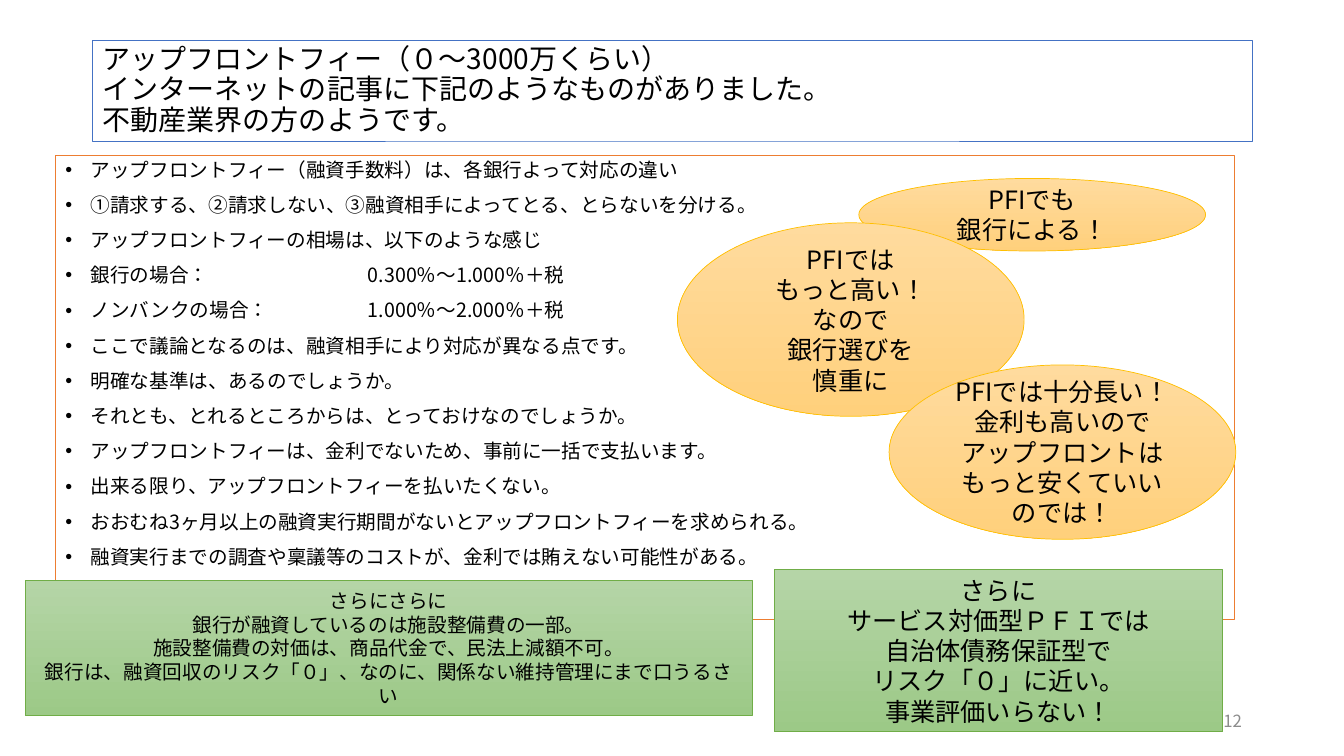
import pptx
import pptx.util
import pptx.dml.color
import pptx.enum.lang
import pptx.enum.shapes
import pptx.enum.text
import pptx.oxml.ns
import lxml.etree

SLIDE_W, SLIDE_H = 13.33, 7.5
FONT = "Noto Sans CJK JP"
TIGHT, NORMAL = 0.9, 1.0
HAIRLINE = 0.5
RECT = pptx.enum.shapes.MSO_SHAPE.RECTANGLE
OVAL = pptx.enum.shapes.MSO_SHAPE.OVAL
ALIGN = pptx.enum.text.PP_ALIGN
ANCHOR = pptx.enum.text.MSO_ANCHOR

HEADING = [
    "アップフロントフィー（０～3000万くらい）",
    "インターネットの記事に下記のようなものがありました。",
    "不動産業界の方のようです。",
]
ARTICLE = [
    "アップフロントフィー（融資手数料）は、各銀行よって対応の違い",
    "①請求する、➁請求しない、③融資相手によってとる、とらないを分ける。",
    "アップフロントフィーの相場は、以下のような感じ",
    "銀行の場合：\t\t0.300％～1.000％＋税",
    "ノンバンクの場合：\t1.000％～2.000％＋税",
    "ここで議論となるのは、融資相手により対応が異なる点です。",
    "明確な基準は、あるのでしょうか。",
    "それとも、とれるところからは、とっておけなのでしょうか。",
    "アップフロントフィーは、金利でないため、事前に一括で支払います。",
    "出来る限り、アップフロントフィーを払いたくない。",
    "おおむね3ヶ月以上の融資実行期間がないとアップフロントフィーを求められる。",
    "融資実行までの調査や稟議等のコストが、金利では賄えない可能性がある。",
]
OPINIONS = [
    ((63.9, 23.6, 25.8, 9.6), ["PFIでも", "銀行による！"]),
    ((50.4, 29.47, 25.8, 25.6),
     ["PFIでは", "もっと高い！", "なので", "銀行選びを", "慎重に"]),
    ((66.15, 48.27, 25.8, 23.07),
     ["PFIでは十分長い！", "金利も高いので", "アップフロントは", "もっと安くていいのでは！"]),
]
REMARKS = [
    ((57.6, 75.33, 33.38, 21.47), 18,
     ["さらに", "サービス対価型ＰＦＩでは", "自治体債務保証型で",
      "リスク「０」に近い。", "事業評価いらない！"]),
    ((1.88, 76.8, 54.08, 17.87), 14,
     ["さらにさらに", "銀行が融資しているのは施設整備費の一部。",
      "施設整備費の対価は、商品代金で、民法上減額不可。",
      "銀行は、融資回収のリスク「０」、なのに、関係ない維持管理にまで口うるさい"]),
]


def rgb(value):
    """Turn a hex string into a colour."""
    return pptx.dml.color.RGBColor.from_string(value)


def area(box):
    """Turn percentages of the slide into left, top, width and height."""
    sides = (SLIDE_W, SLIDE_H, SLIDE_W, SLIDE_H)
    return [pptx.util.Inches(share * side / 100) for share, side in zip(box, sides)]


def panel(slide, outline, box, fills, border):
    """Add a bordered panel with a plain fill or a downward gradient."""
    frame = slide.shapes.add_shape(outline, *area(box))
    frame.shadow.inherit = False
    if len(fills) == 1:
        frame.fill.solid()
        frame.fill.fore_color.rgb = rgb(fills[0])
    else:
        frame.fill.gradient()
        frame.fill.gradient_angle = 270
        for stop, shade in zip(frame.fill.gradient_stops, fills):
            stop.color.rgb = rgb(shade)
    frame.line.color.rgb = rgb(border)
    frame.line.width = pptx.util.Pt(HAIRLINE)
    return frame


def add_run(paragraph, words, size, color="000000"):
    """Add one Japanese run in the slide's font."""
    run = paragraph.add_run()
    run.text = words
    run.font.size = pptx.util.Pt(size)
    run.font.name = FONT
    run.font.language_id = pptx.enum.lang.MSO_LANGUAGE_ID.JAPANESE
    run.font.color.rgb = rgb(color)
    east_asian = lxml.etree.SubElement(run.font._element, pptx.oxml.ns.qn("a:ea"))
    east_asian.set("typeface", FONT)


def add_paragraphs(frame, lines, size, align, spacing, anchor=ANCHOR.MIDDLE, color="000000"):
    """Write one paragraph per line and return the paragraphs."""
    text = frame.text_frame
    text.word_wrap = True
    text.vertical_anchor = anchor
    for index, words in enumerate(lines):
        paragraph = text.add_paragraph() if index else text.paragraphs[0]
        paragraph.alignment = align
        paragraph.line_spacing = spacing
        add_run(paragraph, words, size, color)
    return text.paragraphs


def add_bullet(paragraph):
    """Give a paragraph a hanging bullet and one-inch tabs."""
    properties = paragraph._p.get_or_add_pPr()
    indent = pptx.util.Inches(0.25)
    properties.set("marL", str(indent))
    properties.set("indent", str(-indent))
    properties.set("defTabSz", str(pptx.util.Inches(1)))
    for tag, key, value in (("a:buFont", "typeface", "Arial"), ("a:buChar", "char", "•")):
        lxml.etree.SubElement(properties, pptx.oxml.ns.qn(tag)).set(key, value)


def add_heading(slide):
    """Add the heading panel, one paragraph broken into lines."""
    heading = panel(slide, RECT, (6.9, 5.33, 86.25, 13.33), ["FFFFFF"], "4472C4")
    paragraph = add_paragraphs(heading, HEADING[:1], 20, ALIGN.LEFT, TIGHT)[0]
    for words in HEADING[1:]:
        paragraph.add_line_break()
        add_run(paragraph, words, 20)


def add_article(slide):
    """Add the panel with the bulleted article."""
    article = panel(slide, RECT, (4.13, 20.53, 87.75, 61.47), ["FFFFFF"], "ED7D31")
    for paragraph in add_paragraphs(article, ARTICLE, 14, ALIGN.LEFT, TIGHT, ANCHOR.TOP):
        paragraph.space_before = pptx.util.Pt(10)
        add_bullet(paragraph)


def main():
    """Build the slide and save it."""
    deck = pptx.Presentation()
    deck.slide_width = pptx.util.Inches(SLIDE_W)
    deck.slide_height = pptx.util.Inches(SLIDE_H)
    slide = deck.slides.add_slide(deck.slide_layouts[6])
    add_heading(slide)
    add_article(slide)
    page_number = slide.shapes.add_textbox(*area((70.65, 92.67, 22.5, 5.33)))
    add_paragraphs(page_number, ["12"], 12, ALIGN.RIGHT, NORMAL, color="8C8C8C")
    for box, lines in OPINIONS:
        opinion = panel(slide, OVAL, box, ["FFDB9E", "FFD07C"], "FFC000")
        add_paragraphs(opinion, lines, 18, ALIGN.CENTER, NORMAL)
    for box, size, lines in REMARKS:
        remark = panel(slide, RECT, box, ["B5D5A7", "9CC987"], "70AD47")
        add_paragraphs(remark, lines, size, ALIGN.CENTER, NORMAL)
    deck.save("out.pptx")


if __name__ == "__main__":
    main()
